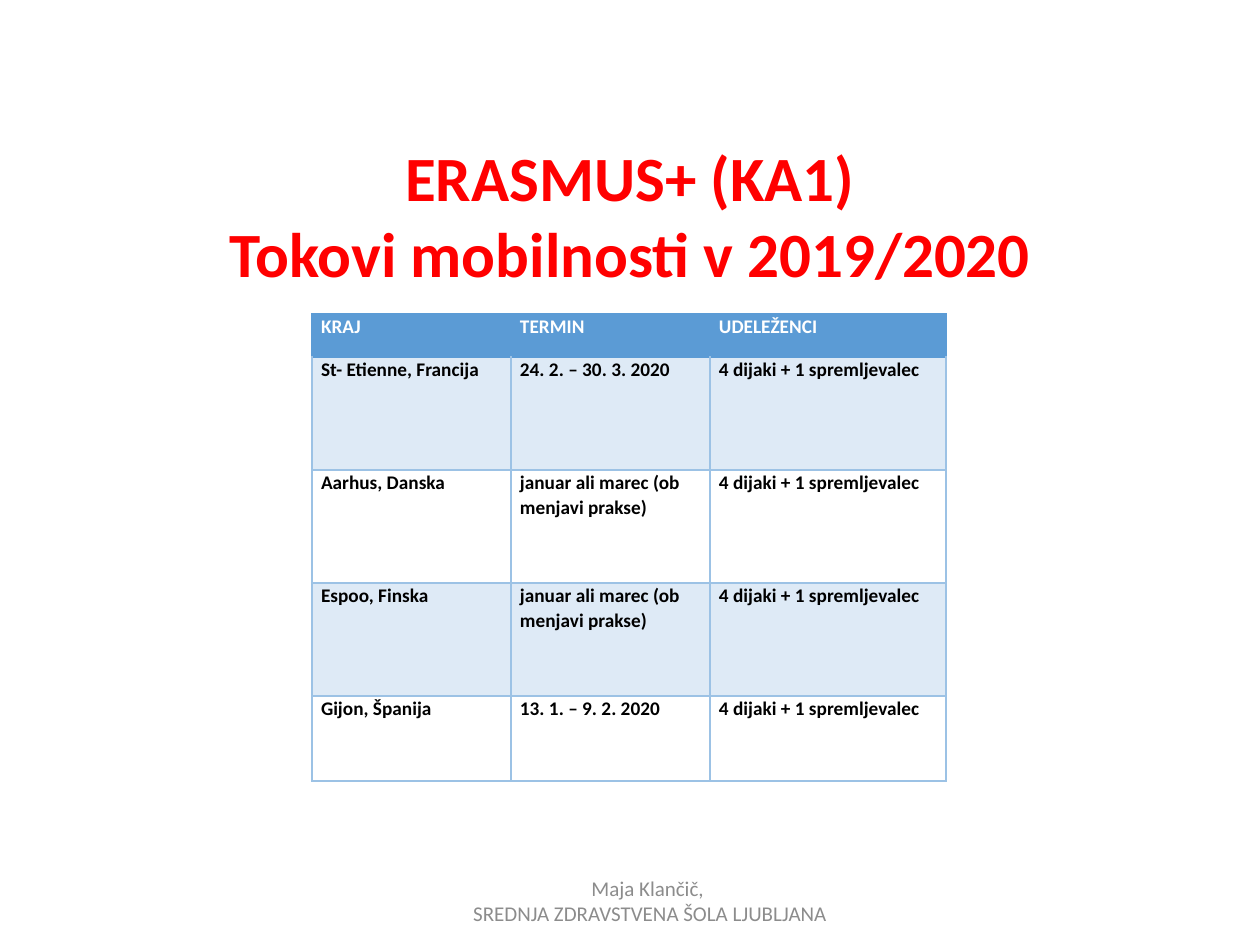
from pptx import Presentation
from pptx import util as u
from pptx.dml.color import RGBColor
from pptx.enum import text
from pptx.oxml import parse_xml
from pptx.oxml.ns import nsdecls

COLORS = {
    "title": "FF0000", "footer": "8C8C8C", "header": "5B9BD5",
    "band": "DEEAF6", "grid": "9CC2E5", "white": "FFFFFF", "black": "000000",
}
TITLE = "ERASMUS+ (KA1)\vTokovi mobilnosti v 2019/2020"
FOOTER = ["Maja Klančič, ", "SREDNJA ZDRAVSTVENA ŠOLA LJUBLJANA"]
PARTICIPANTS = "4 dijaki + 1 spremljevalec"
EXCHANGE_TERM = "januar ali marec (ob menjavi prakse)"
MOBILITIES = [
    ("KRAJ", "TERMIN", "UDELEŽENCI"),
    ("St- Etienne, Francija", "24. 2. – 30. 3. 2020", PARTICIPANTS),
    ("Aarhus, Danska", EXCHANGE_TERM, PARTICIPANTS),
    ("Espoo, Finska", EXCHANGE_TERM, PARTICIPANTS),
    ("Gijon, Španija", "13. 1. – 9. 2. 2020", PARTICIPANTS),
]
COLUMN_WIDTHS = [199, 199, 236]
ROW_HEIGHTS = [43, 113, 113, 113, 85]
TITLE_BOX = (0, 66, 1260, 297)
FOOTER_BOX = (276, 876, 748, 50)
TABLE_ORIGIN = (312, 314)


def px(value):
    return u.Emu(round(value * 914400 / 126))


def color(name):
    return RGBColor.from_string(COLORS[name])


def write(frame, lines, size, fill, bold=False, align=text.PP_ALIGN.LEFT,
          anchor=text.MSO_ANCHOR.MIDDLE, spacing=1.0):
    frame.word_wrap = True
    frame.vertical_anchor = anchor
    for index, line in enumerate(lines):
        paragraph = frame.paragraphs[0] if index == 0 else frame.add_paragraph()
        paragraph.text = line
        paragraph.alignment = align
        paragraph.line_spacing = spacing
        for run in paragraph.runs:
            run.font.name = "Calibri"
            run.font.size = u.Pt(size)
            run.font.bold = bold
            run.font.color.rgb = color(fill)


def set_borders(cell, **sides):
    """Give each named side (L, R, T, B) a 1 pt line in the named colour."""
    properties = cell._tc.get_or_add_tcPr()
    for side, name in sides.items():
        properties.append(parse_xml(
            f'<a:ln{side} {nsdecls("a")} w="12700"><a:solidFill>'
            f'<a:srgbClr val="{COLORS[name]}"/></a:solidFill></a:ln{side}>'))


def add_mobility_table(slide):
    table = slide.shapes.add_table(
        len(MOBILITIES), len(COLUMN_WIDTHS), *map(px, TABLE_ORIGIN),
        px(sum(COLUMN_WIDTHS)), px(sum(ROW_HEIGHTS))).table
    table.first_row = table.horz_banding = False
    for column, width in zip(table.columns, COLUMN_WIDTHS):
        column.width = px(width)
    for row_index, (row, height) in enumerate(zip(table.rows, ROW_HEIGHTS)):
        row.height = px(height)
        is_header = row_index == 0
        line = "header" if is_header else "grid"
        top = "header" if row_index < 2 else "grid"
        fill = "header" if is_header else "band" if row_index % 2 else "white"
        for cell, words in zip(row.cells, MOBILITIES[row_index]):
            cell.margin_left = cell.margin_right = px(9)
            cell.margin_top = cell.margin_bottom = 0
            set_borders(cell, L=line, R=line, T=top, B=line)
            cell.fill.solid()
            cell.fill.fore_color.rgb = color(fill)
            write(cell.text_frame, [words], size=11, bold=True, spacing=1.06,
                  fill="white" if is_header else "black")
            cell.vertical_anchor = text.MSO_ANCHOR.TOP


def main():
    presentation = Presentation()
    presentation.slide_width, presentation.slide_height = px(1260), px(945)
    slide = presentation.slides.add_slide(presentation.slide_layouts[5])

    title = slide.shapes.title
    title.left, title.top, title.width, title.height = map(px, TITLE_BOX)
    write(title.text_frame, [TITLE], size=36, fill="title", bold=True,
          align=text.PP_ALIGN.CENTER)

    footer = slide.shapes.add_textbox(*map(px, FOOTER_BOX))
    write(footer.text_frame, FOOTER, size=12, fill="footer",
          align=text.PP_ALIGN.CENTER)

    add_mobility_table(slide)
    presentation.save("out.pptx")


if __name__ == "__main__":
    main()
